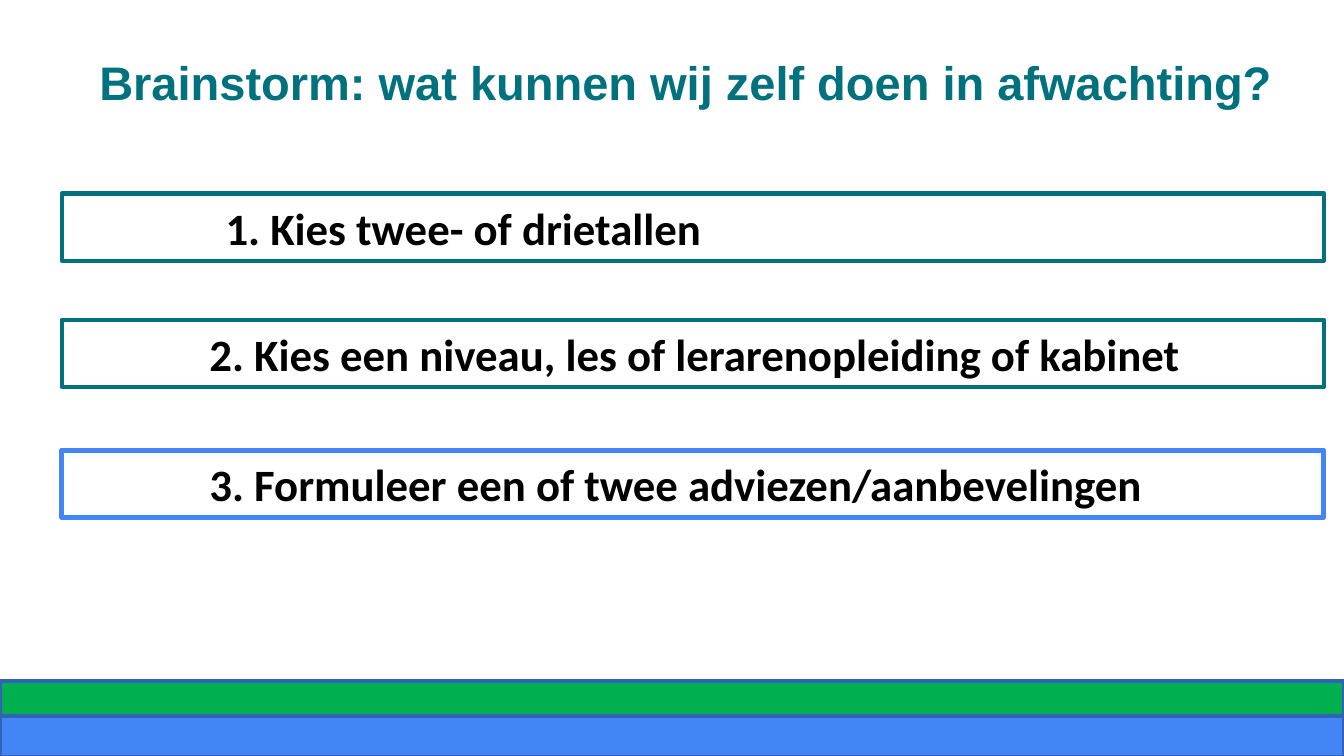
"""Build the brainstorm slide: a title, three framed steps and a footer."""
import dataclasses

import pptx
import pptx.dml.color
import pptx.enum.shapes
import pptx.enum.text
import pptx.util
from lxml import etree

Inches = pptx.util.Inches
RGB = pptx.dml.color.RGBColor.from_string
Align = pptx.enum.text.PP_ALIGN
Anchor = pptx.enum.text.MSO_ANCHOR


@dataclasses.dataclass(frozen=True)
class Theme:
    teal: str = "00717D"
    blue: str = "4285F4"
    green: str = "00B050"
    navy: str = "3162B5"
    black: str = "000000"
    head: float = 25.2
    body: float = 24


THEME = Theme()


def apply(obj, values):
    for name, value in values.items():
        setattr(obj, name, value)


def add_box(slide, place, line, width, fill=None):
    kind = pptx.enum.shapes.MSO_SHAPE.RECTANGLE
    box = slide.shapes.add_shape(kind, *map(Inches, place))
    box.shadow.inherit = False
    if fill:
        box.fill.solid()
        box.fill.fore_color.rgb = RGB(fill)
    else:
        box.fill.background()
    box.line.color.rgb = RGB(line)
    box.line.width = pptx.util.Pt(width)
    return box


def write(shape, text, font, size, color, align, frame):
    apply(shape.text_frame, {"word_wrap": True, **frame})
    para = shape.text_frame.paragraphs[0]
    para.alignment = align
    run = para.add_run()
    run.text = text
    apply(run.font, {"name": font, "size": pptx.util.Pt(size), "bold": True})
    run.font.color.rgb = RGB(color)
    return para


def indent(para, left, first=0, number=False):
    props = para._p.get_or_add_pPr()
    props.set("marL", str(Inches(left)))
    props.set("indent", str(Inches(first)))
    if number:
        tag = pptx.oxml.ns.qn("a:buAutoNum")
        etree.SubElement(props, tag, type="arabicPeriod")


def add_title(slide, text):
    box = slide.shapes.add_textbox(*map(Inches, (0.46, 0.3, 9.39, 0.47)))
    pad = {"margin_left": Inches(0.1), "margin_top": Inches(0.1),
           "margin_right": Inches(0.2), "vertical_anchor": Anchor.TOP}
    write(box, text, "Arial", THEME.head, THEME.teal, Align.CENTER, pad)


def add_step(slide, top, text, line, width, dent):
    box = add_box(slide, (0.46, top, 9.39, 0.5), line, width)
    para = write(box, text, "Calibri", THEME.body, THEME.black, Align.LEFT,
                 {"vertical_anchor": Anchor.MIDDLE})
    indent(para, **dent)


def main():
    deck = pptx.Presentation()
    wide = Inches(10)
    apply(deck, {"slide_width": wide, "slide_height": wide * 9 // 16})
    slide = deck.slides.add_slide(deck.slide_layouts[6])
    add_title(slide, "Brainstorm: wat kunnen wij zelf doen in afwachting?")
    listed = {"left": 1.31, "first": -0.19, "number": True}
    plain = {"left": 1}
    steps = [
        (1.44, " Kies twee- of drietallen", THEME.teal, 2.25, listed),
        (2.38, "2. Kies een niveau, les of lerarenopleiding of kabinet",
         THEME.teal, 2.25, plain),
        (3.35, "3. Formuleer een of twee adviezen/aanbevelingen",
         THEME.blue, 2.5, plain),
    ]
    for step in steps:
        add_step(slide, *step)
    for top, high, fill in [(5.33, 0.3, THEME.blue), (5.07, 0.26, THEME.green)]:
        add_box(slide, (0, top, 10, high), THEME.navy, 2, fill)
    deck.save("out.pptx")


if __name__ == "__main__":
    main()
